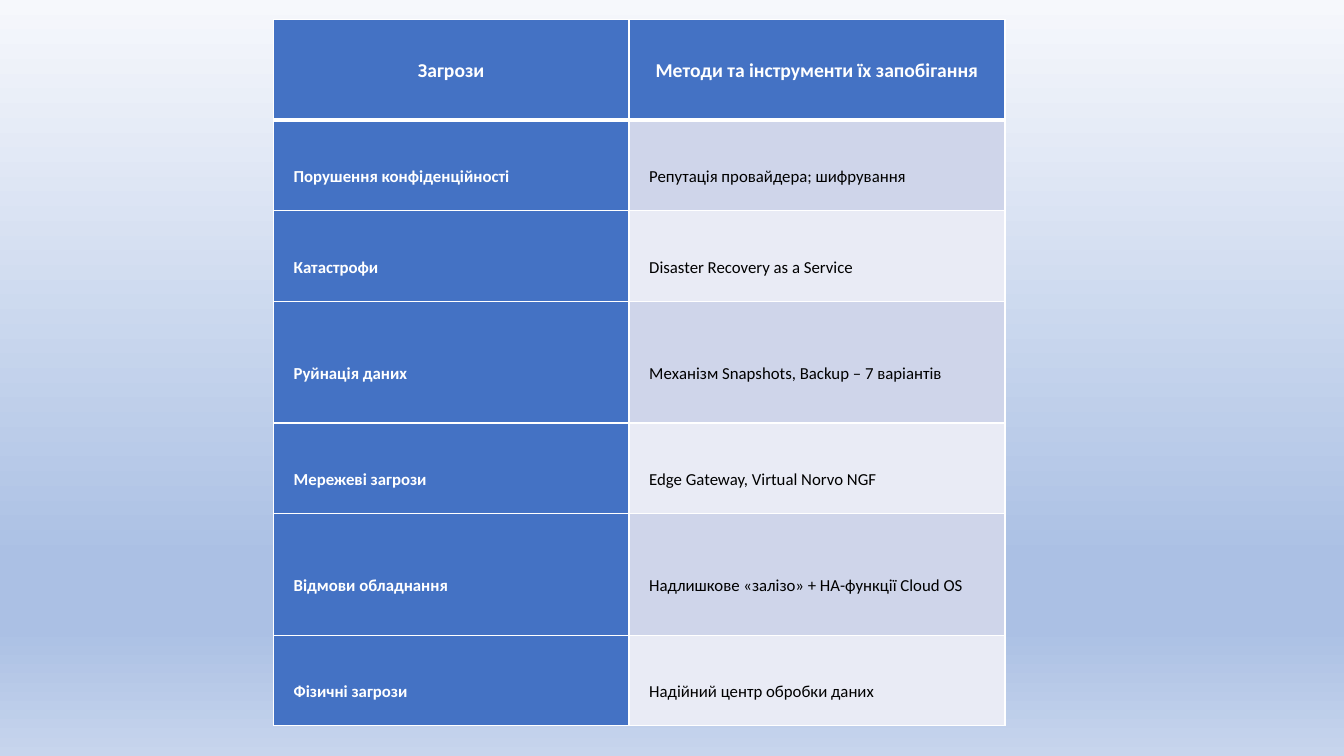
from copy import deepcopy

from lxml import etree
from pptx import Presentation
from pptx.dml.color import RGBColor
from pptx.enum import text
from pptx.oxml import ns
from pptx.util import Cm, Pt

COLORS = {
    "head": "4472C4",
    "band_dark": "CFD5EA",
    "band_light": "E9EBF5",
    "white": "FFFFFF",
    "black": "000000",
}
BACKGROUND = [(0, "F6F8FC"), (0.74, "ABC0E4"), (0.83, "ABC0E4"), (1, "C7D5ED")]
HEADINGS = ("Загрози", "Методи та інструменти їх запобігання")
THREATS = [
    ("Порушення конфіденційності", "Репутація провайдера; шифрування", 2.28),
    ("Катастрофи", "Disaster Recovery as a Service", 2.28),
    ("Руйнація даних", "Механізм Snapshots, Backup – 7 варіантів", 3.07),
    ("Мережеві загрози", "Edge Gateway, Virtual Norvo NGF", 2.28),
    ("Відмови обладнання", "Надлишкове «залізо» + HA-функції Cloud OS", 3.07),
    ("Фізичні загрози", "Надійний центр обробки даних", 2.28),
]
HEAD_HEIGHT = 2.54
FIRST_COLUMN_SHARE = 0.486


def rgb(name):
    return RGBColor.from_string(COLORS[name])


def paint_background(s):
    fill = s.background.fill
    fill.gradient()
    fill.gradient_angle = 270
    stops = next(s._element.iter(ns.qn("a:gsLst")))
    for _ in range(len(BACKGROUND) - len(stops)):
        stops.append(deepcopy(stops[0]))
    for stop, (position, color) in zip(fill.gradient_stops, BACKGROUND):
        stop.color.rgb = RGBColor.from_string(color)
        stop.position = position


def add_borders(cell, top, bottom):
    tc_pr = cell._tc.get_or_add_tcPr()
    for side, width in (("L", 1), ("R", 1), ("T", top), ("B", bottom)):
        line = etree.SubElement(tc_pr, ns.qn(f"a:ln{side}"), w=str(Pt(width)))
        solid = etree.SubElement(line, ns.qn("a:solidFill"))
        etree.SubElement(solid, ns.qn("a:srgbClr"), val=COLORS["white"])


def fill_cell(cell, words, row, column):
    is_head = row == 0
    is_label = is_head or column == 0
    add_borders(cell, 3 if row == 1 else 1, 3 if is_head else 1)
    cell.fill.solid()
    band = "band_dark" if row % 2 else "band_light"
    cell.fill.fore_color.rgb = rgb("head" if is_label else band)
    cell.vertical_anchor = text.MSO_ANCHOR.MIDDLE
    cell.margin_left = cell.margin_right = Cm(0.51)
    cell.margin_top = Cm(0.25 if is_head else 0.79)
    cell.margin_bottom = Cm(0.25)
    p = cell.text_frame.paragraphs[0]
    p.alignment = text.PP_ALIGN.CENTER if is_head else text.PP_ALIGN.LEFT
    p.line_spacing = 1.07
    r = p.add_run()
    r.text = words
    r.font.name = "Calibri"
    r.font.size = Pt(14 if is_head else 12)
    r.font.bold = is_label
    r.font.color.rgb = rgb("white" if is_label else "black")


def add_threat_table(s, left, top, width):
    rows = [(*HEADINGS, HEAD_HEIGHT), *THREATS]
    height = sum(row[-1] for row in rows)
    sp = s.shapes.add_table(len(rows), 2, Cm(left), Cm(top), Cm(width), Cm(height))
    table = sp.table
    table.columns[0].width = Cm(width * FIRST_COLUMN_SHARE)
    table.columns[1].width = Cm(width * (1 - FIRST_COLUMN_SHARE))
    for i, (*words, row_height) in enumerate(rows):
        table.rows[i].height = Cm(row_height)
        for j, word in enumerate(words):
            fill_cell(table.cell(i, j), word, i, j)


def main():
    prs = Presentation()
    prs.slide_width, prs.slide_height = Cm(33.87), Cm(19.05)
    s = prs.slides.add_slide(prs.slide_layouts[6])
    paint_background(s)
    add_threat_table(s, 6.89, 0.49, 18.44)
    prs.save("out.pptx")


if __name__ == "__main__":
    main()
